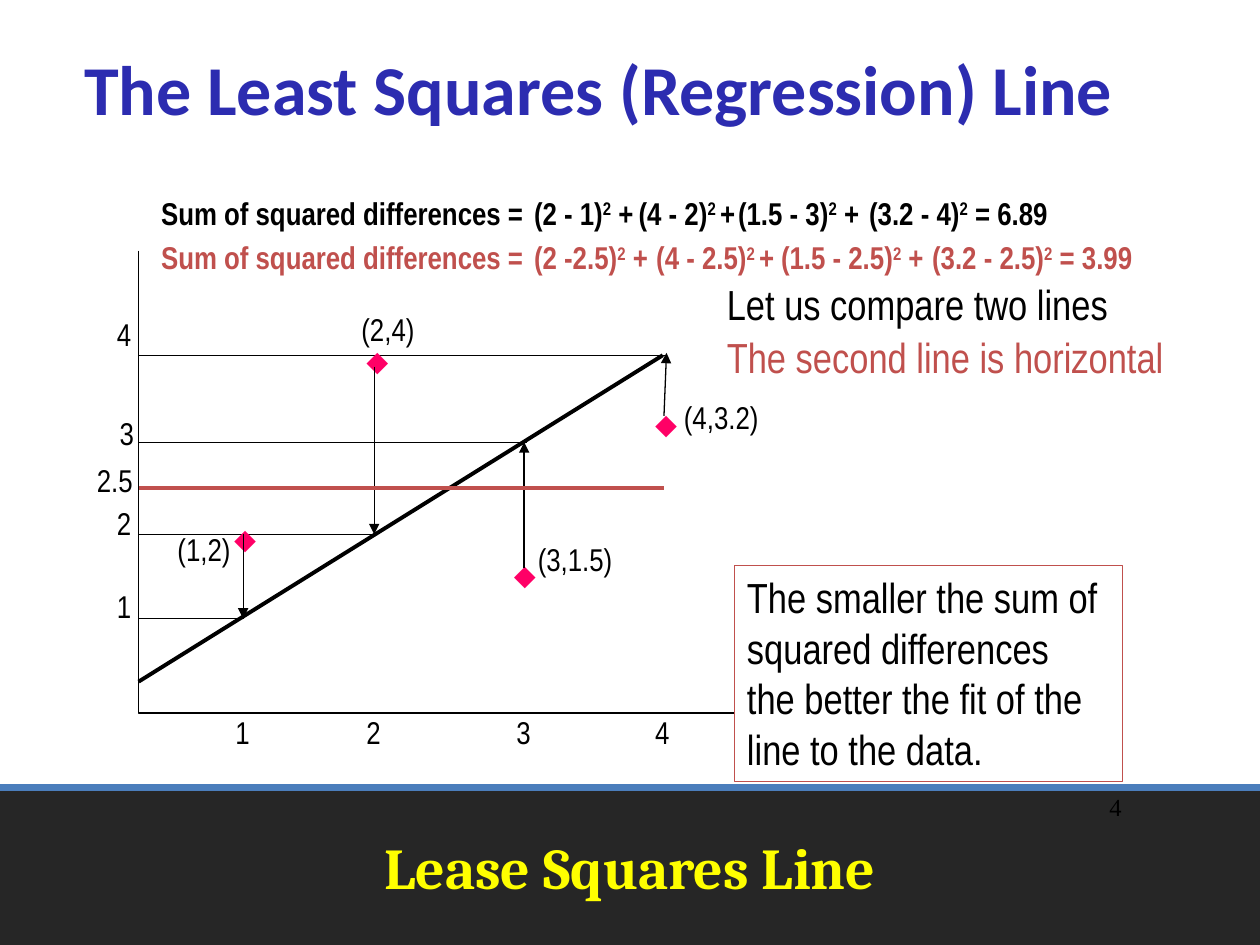
from pptx import Presentation
from pptx.dml.color import RGBColor
from pptx.enum.dml import MSO_LINE
from pptx.enum.shapes import MSO_CONNECTOR, MSO_SHAPE
from pptx.enum.text import MSO_ANCHOR, MSO_AUTO_SIZE, PP_ALIGN
from pptx.oxml.ns import qn
from pptx.util import Inches, Pt
from lxml import etree

STRAIGHT = MSO_CONNECTOR.STRAIGHT
RECTANGLE = MSO_SHAPE.RECTANGLE
DOTTED = MSO_LINE.ROUND_DOT
TOP, MIDDLE = MSO_ANCHOR.TOP, MSO_ANCHOR.MIDDLE
LEFT, CENTER, RIGHT = PP_ALIGN.LEFT, PP_ALIGN.CENTER, PP_ALIGN.RIGHT
FIT_SHAPE, NO_FIT = MSO_AUTO_SIZE.SHAPE_TO_FIT_TEXT, MSO_AUTO_SIZE.NONE

BLACK = RGBColor(0x00, 0x00, 0x00)
WHITE = RGBColor(0xFF, 0xFF, 0xFF)
RED = RGBColor(0xC0, 0x50, 0x4D)
PINK = RGBColor(0xFF, 0x00, 0x66)
NAVY = RGBColor(0x2C, 0x2C, 0xB0)
YELLOW = RGBColor(0xFF, 0xFF, 0x00)
CHARCOAL = RGBColor(0x26, 0x26, 0x26)
BLUE = RGBColor(0x4B, 0x7E, 0xBC)

prs = Presentation()
prs.slide_width, prs.slide_height = Inches(10), Inches(7.5)
slide = prs.slides.add_slide(prs.slide_layouts[6])
shapes = slide.shapes


def write(text, box, size=18, color=BLACK, font="Arial Narrow", bold=False,
          align=LEFT, anchor=TOP, wrap=False, shape=None):
    """Put text in shape or a new text box; pieces between bars are superscript."""
    shape = shape or shapes.add_textbox(*map(Inches, box))
    frame = shape.text_frame
    frame_format = {"word_wrap": wrap, "vertical_anchor": anchor,
                    "auto_size": NO_FIT if wrap else FIT_SHAPE}
    for name, value in frame_format.items():
        setattr(frame, name, value)
    for number, line in enumerate(text.split("\n")):
        paragraph = frame.add_paragraph() if number else frame.paragraphs[0]
        paragraph.alignment = align
        for position, piece in enumerate(line.split("|")):
            run = paragraph.add_run()
            run.text = piece
            for name, value in {"size": Pt(size), "name": font, "bold": bold}.items():
                setattr(run.font, name, value)
            run.font.color.rgb = color
            if position % 2:
                run._r.get_or_add_rPr().set("baseline", "30000")


def draw_line(start, end, color=BLACK, width=0.75, dash=None, arrow=False):
    connector = shapes.add_connector(STRAIGHT, *map(Inches, (*start, *end)))
    connector.line.color.rgb = color
    connector.line.width = Pt(width)
    if dash:
        connector.line.dash_style = dash
    if arrow:
        etree.SubElement(connector.line._get_or_add_ln(), qn("a:tailEnd"), type="triangle")
    etree.SubElement(connector._element.spPr, qn("a:effectLst"))


# Footer band and titles
band = shapes.add_shape(RECTANGLE, Inches(0), Inches(6.25), Inches(10), Inches(1.25))
band.shadow.inherit = False
band.fill.solid()
band.fill.fore_color.rgb = CHARCOAL
band.line.fill.background()
draw_line((0, 6.25), (10, 6.25), BLUE, 4)
write("Lease Squares Line", (0.5, 6.25, 9, 1.25), 33, YELLOW, "Cambria", True,
      CENTER, MIDDLE, True)
write("4", (6.92, 6.24, 2.08, 0.5), 14, font="Times New Roman", align=RIGHT, wrap=True)
write("The Least Squares (Regression) Line", (0.5, 0.07, 8.5, 1.25), 40, NAVY,
      "Calibri", True, CENTER, MIDDLE, True)

# Axes, with the origin at their corner
AXIS_X, AXIS_Y = 1.1, 5.66
builder = shapes.build_freeform(Inches(AXIS_X), Inches(1.99), scale=1.0)
builder.add_line_segments([(Inches(AXIS_X), Inches(AXIS_Y)),
                           (Inches(6.27), Inches(AXIS_Y))], close=False)
axes = builder.convert_to_shape()
axes.shadow.inherit = False
axes.fill.background()
axes.line.color.rgb = BLACK
axes.line.width = Pt(0.75)

for label, left in (("1", 1.77), ("2", 2.81), ("3", 4), ("4", 5.1)):
    write(label, (left, 5.61, 0.32, 0.4))
for label, left, top, width in (("1", 0.83, 4.61, 0.32), ("2", 0.83, 3.95, 0.32),
                                ("2.5", 0.67, 3.61, 0.49), ("3", 0.85, 3.24, 0.32),
                                ("4", 0.83, 2.45, 0.32)):
    write(label, (left, top, width, 0.4))

# Dotted guides from the axis to the sloping line
for guide_end, level in ((1.93, 4.91), (2.97, 4.24), (4.18, 3.51), (5.27, 2.82)):
    draw_line((guide_end, level), (AXIS_X, level), width=0.25, dash=DOTTED)

# Data points: label, label box, marker corner, arrow from point to line
points = (
    ("(1,2)", (1.31, 4.16, 0.62, 0.4), (1.76, 4.07), (1.93, 4.24), (1.93, 4.91)),
    ("(2,4)", (2.77, 2.41, 0.62, 0.4), (2.81, 2.66), (2.97, 2.91), (2.97, 4.24)),
    ("(3,1.5)", (4.17, 4.24, 0.8, 0.4), (3.98, 4.36), (4.16, 4.51), (4.16, 3.51)),
    ("(4,3.2)", (5.33, 3.11, 0.8, 0.4), (5.1, 3.16), (5.27, 3.3), (5.29, 2.8)),
)
for label, label_box, marker, arrow_start, arrow_end in points:
    write("⬥", (*marker, 0.35, 0.4), color=PINK, font="Arial")
    draw_line(arrow_start, arrow_end, arrow=True)
    write(label, label_box)

# The two lines compared
draw_line((AXIS_X, 5.41), (5.26, 2.82), width=2.25)
draw_line((AXIS_X, 3.87), (5.27, 3.87), RED, 2.25)

# Sums of squared differences: text, left, width of each term
sums = (
    (1.49, BLACK, (("(2 - 1)|2| +", 4.14, 1), ("(4 - 2)|2 |+", 4.97, 0.98),
                   ("(1.5 - 3)|2| +", 5.76, 1.17), ("(3.2 - 4)|2| = 6.89", 6.8, 1.63))),
    (1.84, RED, (("(2 -2.5)|2| +", 4.14, 1.12), ("(4 - 2.5)|2 |+", 5.11, 1.15),
                 ("(1.5 - 2.5)|2| +", 6.1, 1.35), ("(3.2 - 2.5)|2| = 3.99", 7.3, 1.8))),
)
for top, color, terms in sums:
    for text, left, width in (("Sum of squared differences =", 1.18, 3.08), *terms):
        write(text, (left, top, width, 0.4), color=color, bold=True)

write("Let us compare two lines", (5.67, 2.16, 3.24, 0.5), 24)
write("The second line is horizontal", (5.67, 2.58, 3.68, 0.5), 24, RED)

# Conclusion
conclusion = shapes.add_shape(RECTANGLE, Inches(5.83), Inches(4.49), Inches(3.08), Inches(1.71))
conclusion.shadow.inherit = False
conclusion.fill.solid()
conclusion.fill.fore_color.rgb = WHITE
conclusion.line.color.rgb = RED
conclusion.line.width = Pt(0.75)
write("The smaller the sum of\nsquared differences\nthe better the fit of the\nline to the data.",
      None, 24, shape=conclusion)

prs.save("out.pptx")
